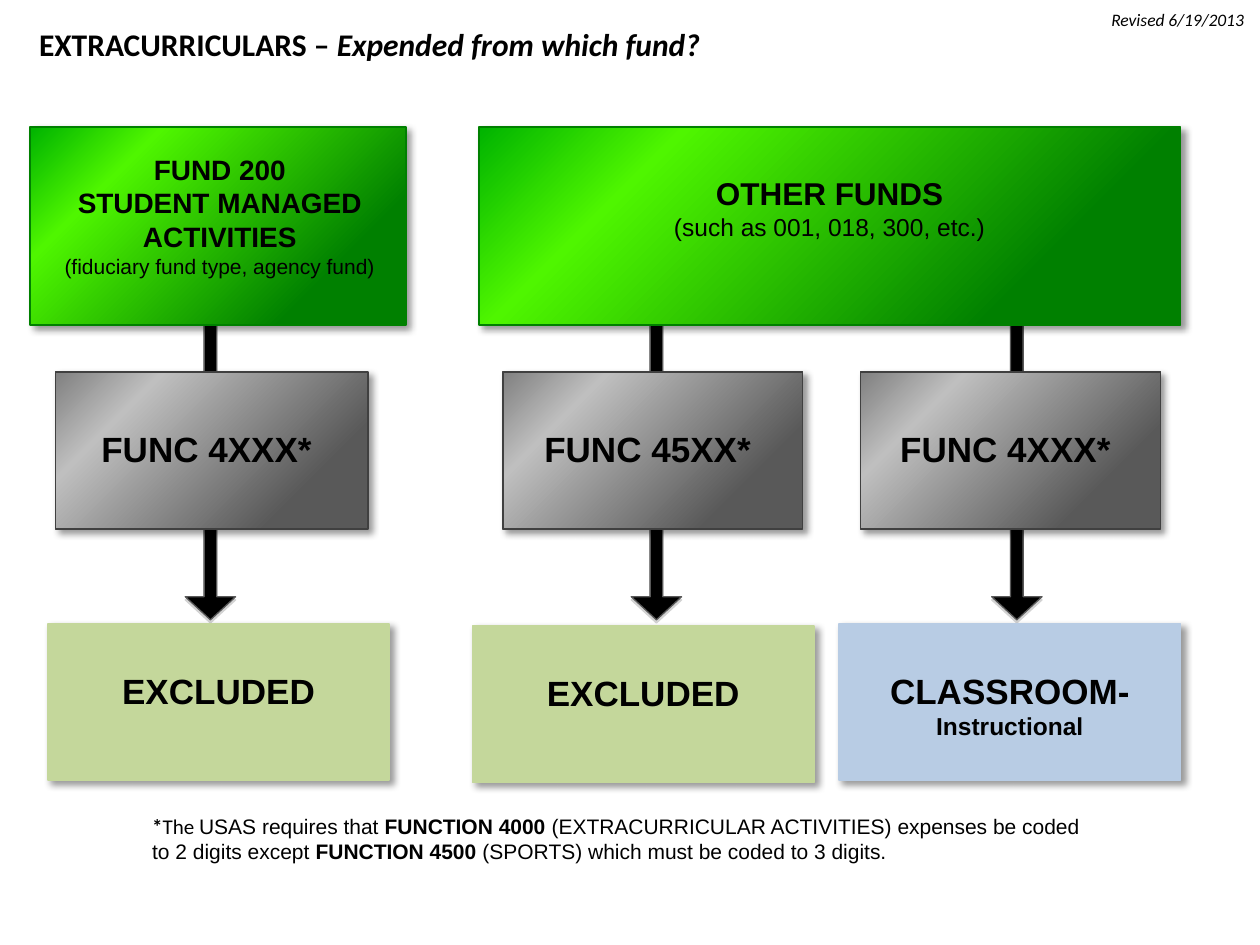
import copy
import dataclasses

import pptx
import pptx.dml.color
import pptx.enum.shapes
import pptx.enum.text
import pptx.oxml
import pptx.oxml.ns
import pptx.util

Inches = pptx.util.Inches
Pt = pptx.util.Pt
Kind = pptx.enum.shapes.MSO_SHAPE
Align = pptx.enum.text.PP_ALIGN
qn = pptx.oxml.ns.qn


@dataclasses.dataclass(frozen=True)
class Theme:
    black: str = "000000"
    edge: str = "595959"
    lime: str = "C4D79B"
    blue: str = "B8CCE4"
    green: tuple = ("008000", "4FF600", "00B300")
    gray: tuple = ("595959", "BFBFBF", "808080")
    green_line: str = "008000"
    gray_line: str = "404040"
    stops: tuple = (0.22, 0.77, 1)
    soft: tuple = ("000000", 40, 4, 3, 45)
    hard: tuple = ("808080", 35, 0, 1.8, 90)
    sans: str = "Arial"
    head: str = "Calibri"
    large: int = 20
    title: int = 18
    fund: int = 16
    sub: int = 14
    note: int = 12
    date: int = 10


THEME = Theme()


def rgb(code):
    return pptx.dml.color.RGBColor.from_string(code)


def write(para, text, size, font=THEME.sans, bold=False, slant=False,
          color=THEME.black, align=None):
    if align is not None:
        para.alignment = align
    run = para.add_run()
    run.text = text
    run.font.name, run.font.size = font, Pt(size)
    run.font.bold, run.font.italic = bold, slant
    run.font.color.rgb = rgb(color)


def place(shape, box):
    shape.left, shape.top, shape.width, shape.height = map(Inches, box)


def shade(shape, look):
    """Give the shape an outer shadow: colour, opacity, blur, distance, angle."""
    color, alpha, blur, dist, angle = look
    shape.shadow.inherit = False
    shape._element.spPr.find(qn("a:effectLst")).append(pptx.oxml.parse_xml(
        f'<a:outerShdw {pptx.oxml.ns.nsdecls("a")} blurRad="{Pt(blur)}" '
        f'dist="{Pt(dist)}" dir="{angle * 60000}" algn="tl" rotWithShape="0">'
        f'<a:srgbClr val="{color}"><a:alpha val="{alpha * 1000}"/>'
        f'</a:srgbClr></a:outerShdw>'))


def blend(fill, shape, colors):
    """Fill with three stops running to the upper left."""
    fill.gradient()
    fill.gradient_angle = 135
    stops = next(shape._element.spPr.iter(qn("a:gsLst")))
    stops.append(copy.deepcopy(stops[0]))
    for stop, color, spot in zip(fill.gradient_stops, colors, THEME.stops):
        stop.color.rgb, stop.position = rgb(color), spot


def draw(slide, kind, box, fill, line, width, look):
    shape = slide.shapes.add_shape(kind, *map(Inches, box))
    if isinstance(fill, tuple):
        blend(shape.fill, shape, fill)
    else:
        shape.fill.solid()
        shape.fill.fore_color.rgb = rgb(fill)
    shape.line.color.rgb = rgb(line)
    shape.line.width = Pt(width)
    shade(shape, look)
    return shape


def panel(slide, box, fill, line, drop, lines, right=0.1):
    """Draw a box whose centred lines start at the given drop from its top."""
    shape = draw(slide, Kind.RECTANGLE, box, fill, line, 1, THEME.soft)
    frame = shape.text_frame
    frame.word_wrap = True
    frame.vertical_anchor = pptx.enum.text.MSO_ANCHOR.TOP
    frame.margin_top, frame.margin_right = Inches(drop), Inches(right)
    for i, (text, size, bold) in enumerate(lines):
        para = frame.add_paragraph() if i else frame.paragraphs[0]
        write(para, text, size, bold=bold, align=Align.CENTER)


def arrow(slide, mid, top, length, span=0.4):
    box = mid - length / 2, top + (length - span) / 2, length, span
    shape = draw(slide, Kind.RIGHT_ARROW, box, THEME.black, THEME.edge, 0.75,
                 THEME.hard)
    shape.rotation = 90
    shape.adjustments[0], shape.adjustments[1] = 0.25, 0.458


def column(slide, box, mid, inset, width, code, fill, lines):
    """Stack an arrow, its function box and the result at the foot of box."""
    left, top, wide, high = box
    foot = 1.24
    arrow(slide, left + mid, top, 2.66)
    panel(slide, (left + inset, top + 0.69, width, 1.25), THEME.gray,
          THEME.gray_line, 0.44, [(code, THEME.large, True)], right=0.18)
    panel(slide, (left, top + high - foot, wide, foot), fill, fill, 0.36, lines)


def funds(slide, box):
    left, top, wide, high = box
    first, other = 2.98, 5.57
    panel(slide, (left, top, first, high), THEME.green, THEME.green_line, 0.2,
          [("FUND 200", THEME.fund, True),
           ("STUDENT MANAGED ACTIVITIES", THEME.fund, True),
           ("(fiduciary fund type, agency fund)", THEME.note, False)], right=0.07)
    panel(slide, (left + wide - other, top, other, high), THEME.green,
          THEME.green_line, 0.37,
          [("OTHER FUNDS", THEME.title, True),
           ("(such as 001, 018, 300, etc.)", THEME.sub, False)])


def label(slide, box):
    shape = slide.shapes.add_textbox(*map(Inches, box))
    shape.text_frame.word_wrap = True
    return shape.text_frame.paragraphs[0]


def header(slide, box):
    title = slide.shapes.title
    place(title, box)
    frame = title.text_frame
    frame.auto_size = pptx.enum.text.MSO_AUTO_SIZE.NONE
    frame.vertical_anchor = pptx.enum.text.MSO_ANCHOR.TOP
    para = frame.paragraphs[0]
    for text, slant in (("EXTRACURRICULARS – ", False),
                        ("Expended from which fund?", True)):
        write(para, text, THEME.title, font=THEME.head, bold=True, slant=slant,
              align=Align.LEFT)


def stamp(slide, box):
    write(label(slide, box), "Revised 6/19/2013", THEME.date, font=THEME.head,
          slant=True, align=Align.RIGHT)


def note(slide, box):
    para = label(slide, box)
    for text, font, bold in (
            ("*", THEME.head, True),
            ("The ", THEME.head, False),
            ("USAS requires that ", THEME.sans, False),
            ("FUNCTION 4000 ", THEME.sans, True),
            ("(EXTRACURRICULAR ACTIVITIES) expenses be coded to 2 digits except ",
             THEME.sans, False),
            ("FUNCTION 4500 ", THEME.sans, True),
            ("(SPORTS) which must be coded to 3 digits.", THEME.sans, False)):
        write(para, text, THEME.note, font=font, bold=bold)


def main():
    deck = pptx.Presentation()
    deck.slide_width, deck.slide_height = Inches(10), Inches(7.5)
    slide = deck.slides.add_slide(deck.slide_layouts[5])
    header(slide, (0.21, 0.15, 8.78, 0.4))
    stamp(slide, (7.64, 0.02, 2.33, 0.4))
    out = [("EXCLUDED", THEME.large, True)]
    room = [("CLASSROOM-", THEME.large, True), ("Instructional", THEME.sub, True)]
    for left, high, mid, inset, width, code, fill, lines in (
            (0.38, 3.93, 1.29, 0.06, 2.48, "FUNC 4XXX*", THEME.lime, out),
            (3.75, 3.95, 1.46, 0.24, 2.38, "FUNC 45XX*", THEME.lime, out),
            (6.66, 3.93, 1.41, 0.17, 2.38, "FUNC 4XXX*", THEME.blue, room)):
        column(slide, (left, 2.26, 2.71, high), mid, inset, width, code, fill, lines)
    funds(slide, (0.24, 1.01, 9.13, 1.57))
    note(slide, (1.11, 6.41, 7.7, 0.5))
    deck.save("out.pptx")


if __name__ == "__main__":
    main()
